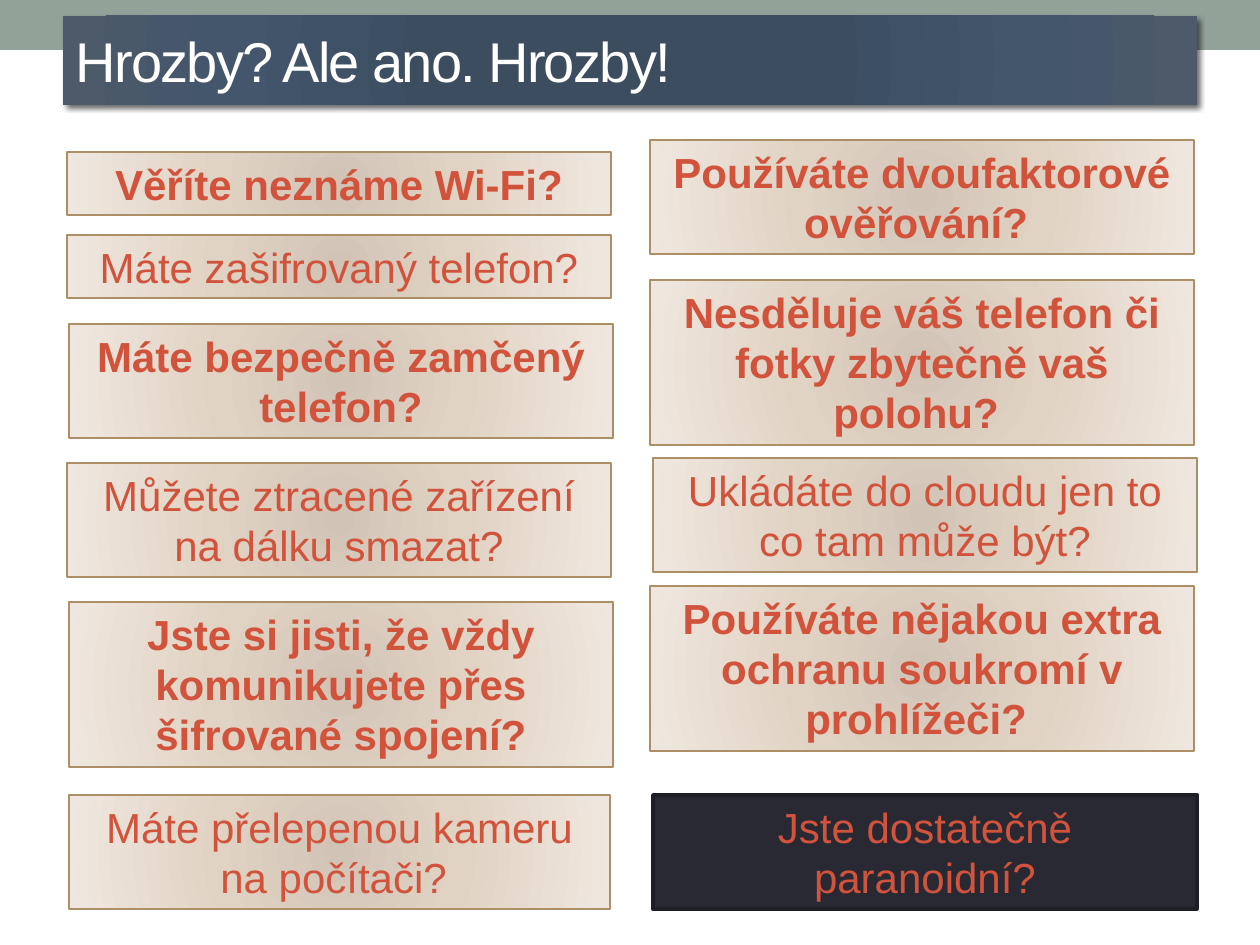
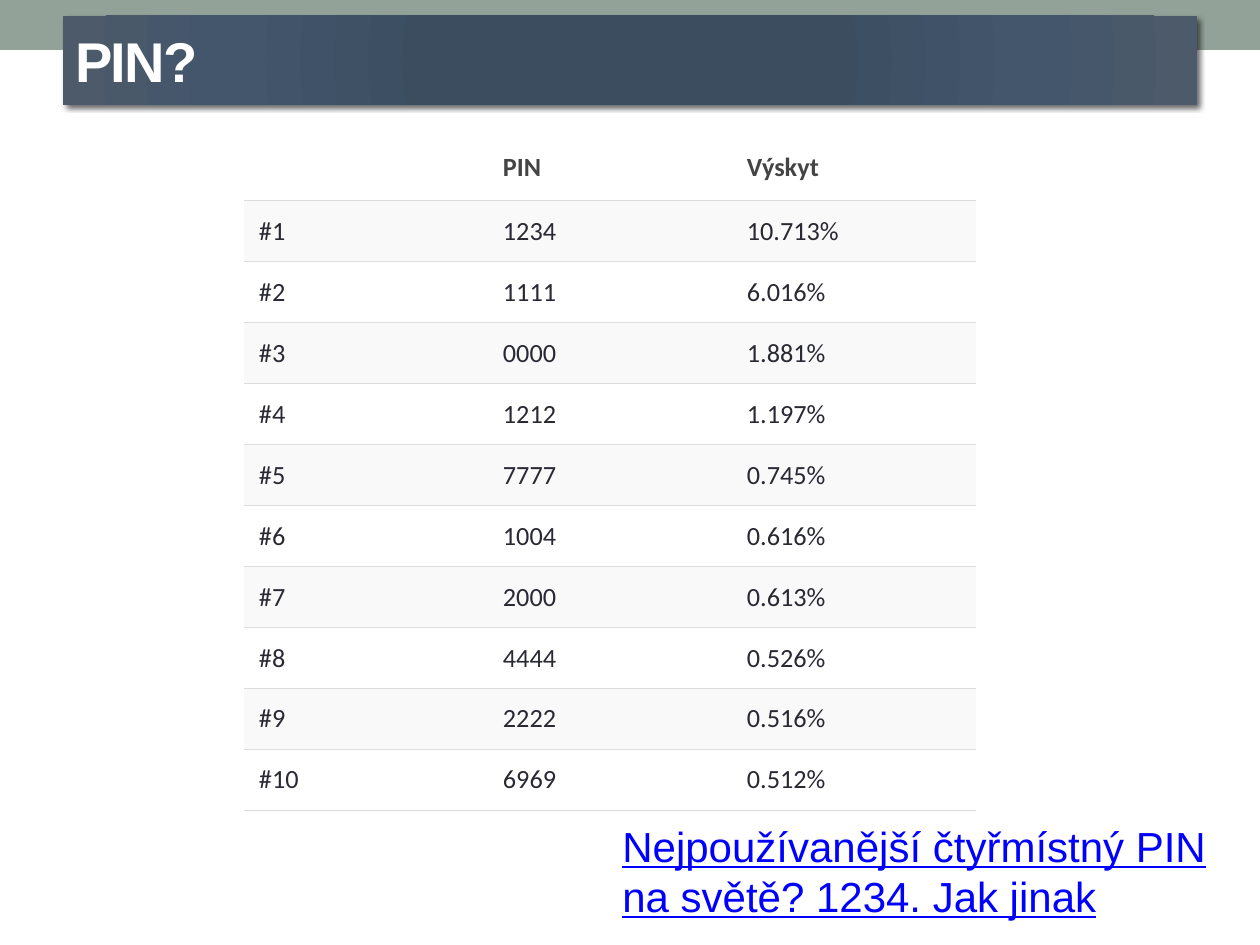
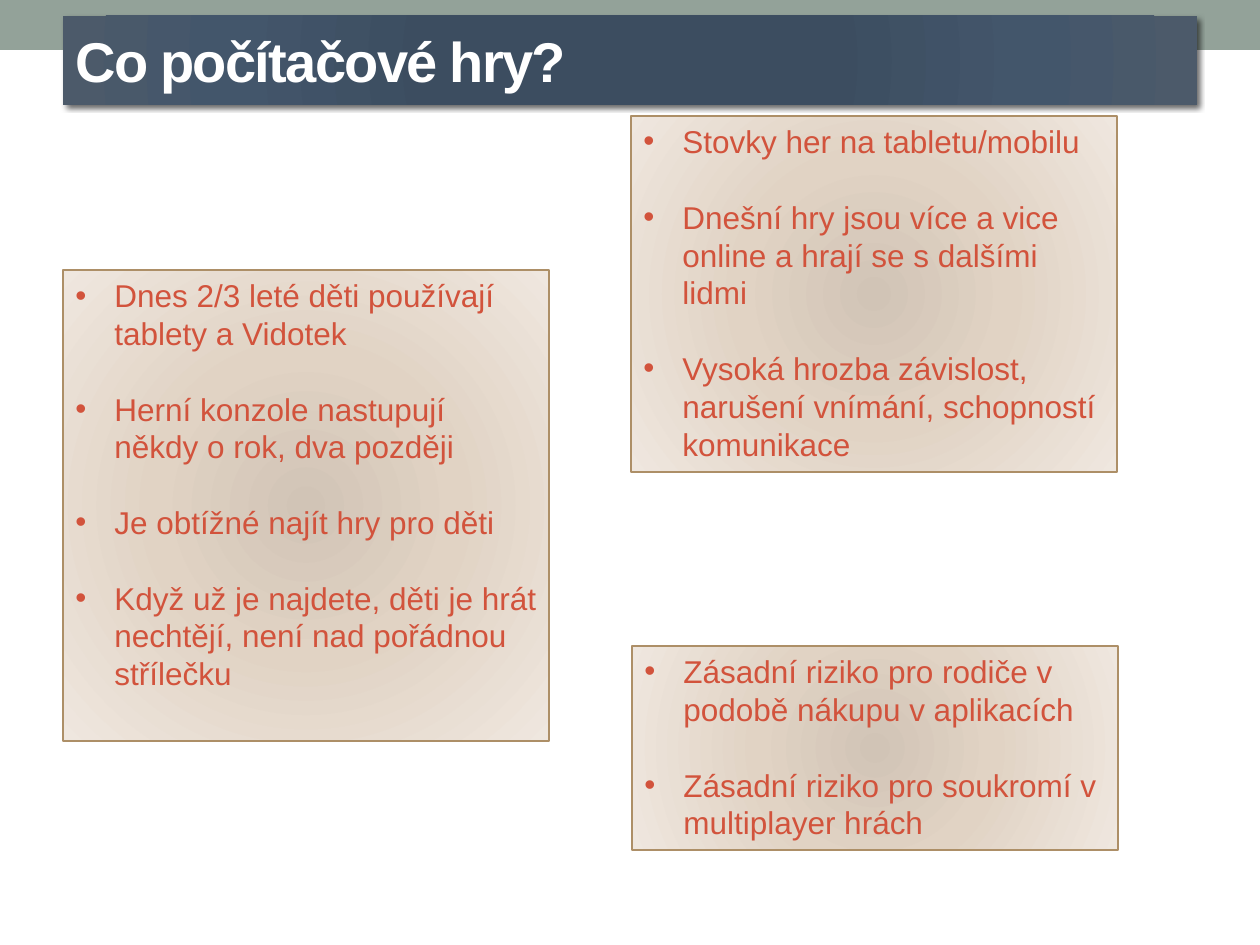
from pptx import Presentation
from pptx.dml.color import RGBColor
from pptx.enum.shapes import MSO_SHAPE
from pptx.enum.text import MSO_ANCHOR, PP_ALIGN
from pptx.oxml import parse_xml
from pptx.oxml.ns import nsdecls
from pptx.util import Pt

PX = 914400 / 126
RECTANGLE = MSO_SHAPE.RECTANGLE
TOP, MIDDLE = MSO_ANCHOR.TOP, MSO_ANCHOR.MIDDLE
LEFT, CENTER = PP_ALIGN.LEFT, PP_ALIGN.CENTER

SAGE = RGBColor(0x93, 0xA2, 0x99)
WHITE = RGBColor(0xFF, 0xFF, 0xFF)
RED = RGBColor(0xD2, 0x53, 0x3C)
BRONZE = RGBColor(0xAD, 0x8F, 0x67)
INK = RGBColor(0x29, 0x29, 0x34)
INK_EDGE = RGBColor(0x1E, 0x1E, 0x26)
LINK_BLUE = RGBColor(0x00, 0x00, 0xFF)
HEADER_GREY = RGBColor(0x44, 0x44, 0x44)
STRIPE = RGBColor(0xF9, 0xF9, 0xF9)
RULE = RGBColor(0xDD, 0xDD, 0xDD)

TITLE_STOPS = [(0, "3B4D61"), (34, "3C4D60"), (70, "43566B"), (100, "4C5A6A")]
SAND_STOPS = [(0, "D1C4B6"), (45, "E1D3C4"), (100, "EFE7DF")]


def add_panel(page, place, fill, edge=None, edge_width=0.75):
    """Add a rectangle at a px place; fill is a colour or a list of radial gradient stops."""
    box = page.shapes.add_shape(RECTANGLE, *(round(n * PX) for n in place))
    box.shadow.inherit = False
    if isinstance(fill, RGBColor):
        box.fill.solid()
        box.fill.fore_color.rgb = fill
    else:
        stops = "".join(f'<a:gs pos="{at * 1000}"><a:srgbClr val="{colour}"/></a:gs>'
                        for at, colour in fill)
        box._element.spPr.prstGeom.addnext(parse_xml(
            f'<a:gradFill {nsdecls("a")} rotWithShape="1"><a:gsLst>{stops}</a:gsLst>'
            '<a:path path="circle"><a:fillToRect l="100000" t="100000" r="100000" b="100000"/>'
            '</a:path></a:gradFill>'))
    if edge is None:
        box.line.fill.background()
    else:
        box.line.color.rgb = edge
        box.line.width = Pt(edge_width)
    box.text_frame.word_wrap = True
    box.text_frame.vertical_anchor = TOP
    return box


def add_text(para, text, size, colour, bold=False, font="Arial", align=LEFT):
    para.alignment = align
    span = para.add_run()
    span.text = text
    span.font.name = font
    span.font.size = Pt(size)
    span.font.bold = bold
    span.font.color.rgb = colour
    return span


deck = Presentation()
deck.slide_width = round(1260 * PX)
deck.slide_height = round(945 * PX)

# Shared band and title
pages = []
for title, bold in [("Hrozby? Ale ano. Hrozby!", False), ("PIN?", True),
                    ("Co počítačové hry?", True)]:
    page = deck.slides.add_slide(deck.slide_layouts[6])
    add_panel(page, (0, 0, 1260, 50), SAGE)
    title_bar = add_panel(page, (63, 16, 1134, 89), TITLE_STOPS)
    title_bar.text_frame.vertical_anchor = MIDDLE
    span = add_text(title_bar.text_frame.paragraphs[0], title, 32, WHITE, bold)
    span._r.get_or_add_rPr().set("spc", "-100")
    title_bar._element.spPr.find("{*}effectLst").append(parse_xml(
        f'<a:outerShdw {nsdecls("a")} blurRad="38100" dist="25400" dir="2700000" '
        'rotWithShape="0"><a:srgbClr val="000000"><a:alpha val="60000"/></a:srgbClr>'
        '</a:outerShdw>'))
    pages.append(page)
threats_page, pin_page, games_page = pages

# Threats: left, top, width, height, bold, question
QUESTIONS = [
    (67, 152, 544, 63, True, "Věříte neznáme Wi-Fi?"),
    (67, 235, 544, 63, False, "Máte zašifrovaný telefon?"),
    (69, 324, 544, 114, True, "Máte bezpečně zamčený telefon?"),
    (67, 463, 544, 114, False, "Můžete ztracené zařízení na dálku smazat?"),
    (69, 602, 544, 165, True, "Jste si jisti, že vždy komunikujete přes šifrované spojení?"),
    (650, 140, 544, 114, True, "Používáte dvoufaktorové ověřování? "),
    (650, 280, 544, 165, True, "Nesděluje váš telefon či fotky zbytečně vaš polohu? "),
    (653, 458, 544, 114, False, "Ukládáte do cloudu jen to co tam může být?"),
    (650, 586, 544, 165, True, "Používáte nějakou extra ochranu soukromí v prohlížeči? "),
    (69, 795, 541, 114, False, "Máte přelepenou kameru na počítači? "),
]
for *place, bold, question in QUESTIONS:
    box = add_panel(threats_page, place, SAND_STOPS, BRONZE)
    add_text(box.text_frame.paragraphs[0], question, 24, RED, bold, align=CENTER)
paranoia_box = add_panel(threats_page, (653, 795, 544, 114), INK, INK_EDGE, 2.08)
add_text(paranoia_box.text_frame.paragraphs[0], "Jste dostatečně paranoidní?", 24, RED,
         align=CENTER)

# Most used PINs
PINS = [("1234", "10.713%"), ("1111", "6.016%"), ("0000", "1.881%"), ("1212", "1.197%"),
        ("7777", "0.745%"), ("1004", "0.616%"), ("2000", "0.613%"), ("4444", "0.526%"),
        ("2222", "0.516%"), ("6969", "0.512%")]
rows = [("", "PIN", "Výskyt")] + [(f"#{rank}", *pin) for rank, pin in enumerate(PINS, 1)]

link_box = pin_page.shapes.add_textbox(*(round(n * PX) for n in (610, 814, 630, 114)))
link_box.text_frame.word_wrap = True
link = add_text(link_box.text_frame.paragraphs[0],
                "Nejpoužívanější čtyřmístný PIN na světě? 1234. Jak jinak", 24, LINK_BLUE)
link.font.underline = True

table = pin_page.shapes.add_table(
    len(rows), 3, *(round(n * PX) for n in (244, 135, 732, 61 * len(rows)))).table
table.first_row = False
table.horz_banding = False
for row_number, row in enumerate(rows):
    table.rows[row_number].height = round(61 * PX)
    is_header = row_number == 0
    for column, text in enumerate(row):
        cell = table.cell(row_number, column)
        cell.vertical_anchor = MIDDLE
        cell.margin_left = cell.margin_right = round(15 * PX)
        cell.margin_top = cell.margin_bottom = round(14 * PX)
        cell.fill.solid()
        cell.fill.fore_color.rgb = STRIPE if row_number % 2 else WHITE
        if text:
            add_text(cell.text_frame.paragraphs[0], text, 15,
                     HEADER_GREY if is_header else INK, is_header, "Calibri")
        ruled_sides = ("lnB",) if is_header else ("lnT", "lnB")
        for position, side in enumerate(("lnL", "lnR", "lnT", "lnB")):
            paint = (f'<a:solidFill><a:srgbClr val="{RULE}"/></a:solidFill>'
                     if side in ruled_sides else "<a:noFill/>")
            cell._tc.get_or_add_tcPr().insert(position, parse_xml(
                f'<a:{side} {nsdecls("a")} w="9525">{paint}</a:{side}>'))

# Computer games
GAME_LISTS = [
    ((63, 270, 486, 471), ["Dnes 2/3 leté děti používají tablety a Vidotek",
                           "Herní konzole nastupují někdy o rok, dva později",
                           "Je obtížné najít hry pro děti",
                           "Když už je najdete, děti je hrát nechtějí, "
                           "není nad pořádnou střílečku"]),
    ((631, 116, 486, 356), ["Stovky her na tabletu/mobilu",
                            "Dnešní hry jsou více a vice online a hrají se s dalšími lidmi",
                            "Vysoká hrozba závislost, narušení vnímání, "
                            "schopností komunikace"]),
    ((632, 646, 486, 204), ["Zásadní riziko pro rodiče v podobě nákupu v aplikacích",
                            "Zásadní riziko pro soukromí v multiplayer hrách"]),
]
for place, points in GAME_LISTS:
    frame = add_panel(games_page, place, SAND_STOPS, BRONZE).text_frame
    for number, point in enumerate(points):
        para = frame.add_paragraph() if number else frame.paragraphs[0]
        add_text(para, point, 18, RED)
        if number:
            para.space_before = Pt(21.6)
        properties = para._p.get_or_add_pPr()
        properties.set("marL", str(round(39 * PX)))
        properties.set("indent", str(round(-39 * PX)))
        properties.append(parse_xml(f'<a:buFont {nsdecls("a")} typeface="Arial"/>'))
        properties.append(parse_xml(f'<a:buChar {nsdecls("a")} char="•"/>'))

deck.save("out.pptx")
